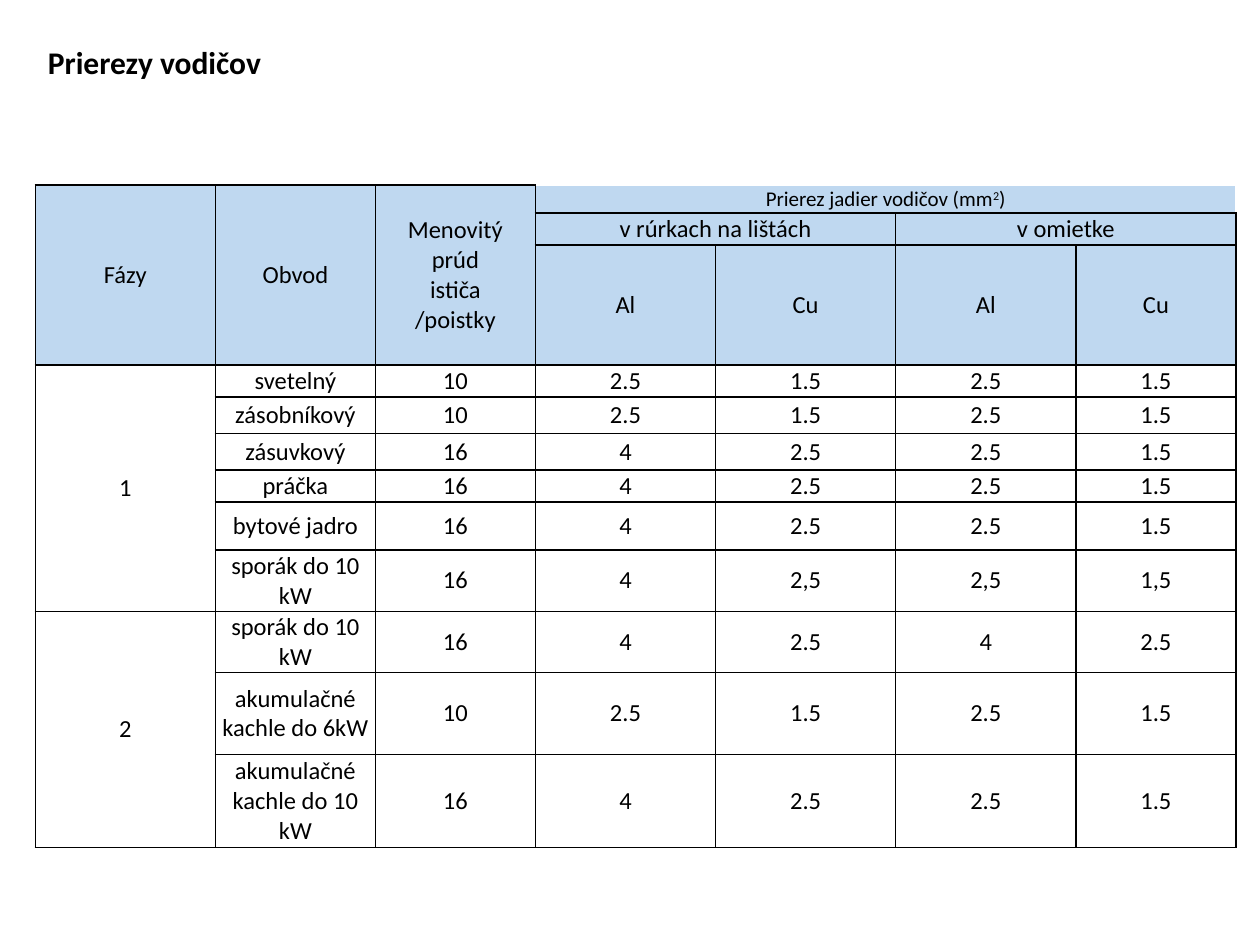
from lxml.etree import SubElement
from pptx import Presentation
from pptx.dml.color import RGBColor
from pptx.enum.text import MSO_ANCHOR, MSO_AUTO_SIZE, PP_ALIGN
from pptx.oxml.ns import qn
from pptx.util import Inches, Pt

BLACK = RGBColor(0x00, 0x00, 0x00)
HEADER_BLUE = RGBColor(0xBF, 0xD8, 0xF0)
FONT = "Calibri"
LEFT = Inches(0.28)

COL_WIDTHS = [1.43, 1.27, 1.27, 1.43, 1.43, 1.43, 1.27]
ROW_HEIGHTS = [0.21, 0.21, 0.32, 0.21, 0.29, 0.29, 0.21, 0.38, 0.47, 0.47, 0.65, 0.74]
HEADER_ROWS = 3
FIRST_SECTION_COL = 3

HEADER = [
    ["Fázy", "Obvod", "Menovitý\nprúd\nističa\n/poistky", "", "", "", ""],
    ["", "", "", "v rúrkach na lištách", "", "v omietke", ""],
    ["", "", "", "Al", "Cu", "Al", "Cu"],
]
CIRCUITS = [
    ["1", "svetelný", "10", "2.5", "1.5", "2.5", "1.5"],
    ["", "zásobníkový", "10", "2.5", "1.5", "2.5", "1.5"],
    ["", "zásuvkový", "16", "4", "2.5", "2.5", "1.5"],
    ["", "práčka", "16", "4", "2.5", "2.5", "1.5"],
    ["", "bytové jadro", "16", "4", "2.5", "2.5", "1.5"],
    ["", "sporák do 10 kW", "16", "4", "2,5", "2,5", "1,5"],
    ["2", "sporák do 10 kW", "16", "4", "2.5", "4", "2.5"],
    ["", "akumulačné kachle do 6kW", "10", "2.5", "1.5", "2.5", "1.5"],
    ["", "akumulačné kachle do 10 kW", "16", "4", "2.5", "2.5", "1.5"],
]
# first row, first column, last row, last column
MERGES = [
    (0, 0, 2, 0), (0, 1, 2, 1), (0, 2, 2, 2),
    (0, 3, 0, 6), (1, 3, 1, 4), (1, 5, 1, 6),
    (3, 0, 8, 0), (9, 0, 11, 0),
]


def set_font(p, size, bold=False):
    p.font.name = FONT
    p.font.size = Pt(size)
    p.font.bold = bold
    p.font.color.rgb = BLACK


def add_title(slide, text):
    sp = slide.shapes.title
    sp.left, sp.top, sp.width, sp.height = LEFT, Inches(0.29), Inches(8.11), Inches(0.4)
    tf = sp.text_frame
    tf.text = text
    tf.word_wrap = True
    tf.auto_size = MSO_AUTO_SIZE.SHAPE_TO_FIT_TEXT
    tf.vertical_anchor = MSO_ANCHOR.TOP
    p = tf.paragraphs[0]
    p.alignment = PP_ALIGN.LEFT
    set_font(p, 18, bold=True)


def set_borders(cell, sides):
    """Draw thin black lines on the given sides, named by L, R, T and B."""
    tc_pr = cell._tc.get_or_add_tcPr()
    for side in sides:
        line = SubElement(tc_pr, qn(f"a:ln{side}"), w=str(Pt(1)))
        fill = SubElement(line, qn("a:solidFill"))
        SubElement(fill, qn("a:srgbClr"), val=str(BLACK))


def format_cell(cell, row, col):
    cell.margin_left = cell.margin_right = Inches(0.03)
    cell.margin_top = cell.margin_bottom = Inches(0.01)
    cell.vertical_anchor = MSO_ANCHOR.MIDDLE
    is_section = row == 0 and col >= FIRST_SECTION_COL
    if is_section:
        set_borders(cell, "LB" if col == FIRST_SECTION_COL else "B")
    else:
        set_borders(cell, "LRTB")
    if row < HEADER_ROWS:
        cell.fill.solid()
        cell.fill.fore_color.rgb = HEADER_BLUE
    else:
        cell.fill.background()
    p = cell.text_frame.paragraphs[0]
    p.alignment = PP_ALIGN.CENTER
    set_font(p, 12 if is_section else 14)


def write_section_heading(cell):
    p = cell.text_frame.paragraphs[0]
    for text in ("Prierez jadier vodičov (mm", "2", ")"):
        r = p.add_run()
        r.text = text
        if text == "2":
            r._r.get_or_add_rPr().set("baseline", "30000")


def add_wire_table(slide):
    rows = HEADER + CIRCUITS
    table = slide.shapes.add_table(
        len(rows), len(COL_WIDTHS), LEFT, Inches(1.47), Inches(9.53), Inches(4.84)
    ).table
    table.first_row = table.horz_banding = False
    for column, width in zip(table.columns, COL_WIDTHS):
        column.width = Inches(width)
    for row, height in zip(table.rows, ROW_HEIGHTS):
        row.height = Inches(height)
    for i, texts in enumerate(rows):
        for j, text in enumerate(texts):
            cell = table.cell(i, j)
            cell.text_frame.paragraphs[0].text = text
            format_cell(cell, i, j)
    write_section_heading(table.cell(0, FIRST_SECTION_COL))
    for top, left, bottom, right in MERGES:
        table.cell(top, left).merge(table.cell(bottom, right))


def main():
    prs = Presentation()
    prs.slide_width, prs.slide_height = Inches(10), Inches(7.5)
    slide = prs.slides.add_slide(prs.slide_layouts[5])
    add_wire_table(slide)
    add_title(slide, "Prierezy vodičov")
    prs.save("out.pptx")


if __name__ == "__main__":
    main()
